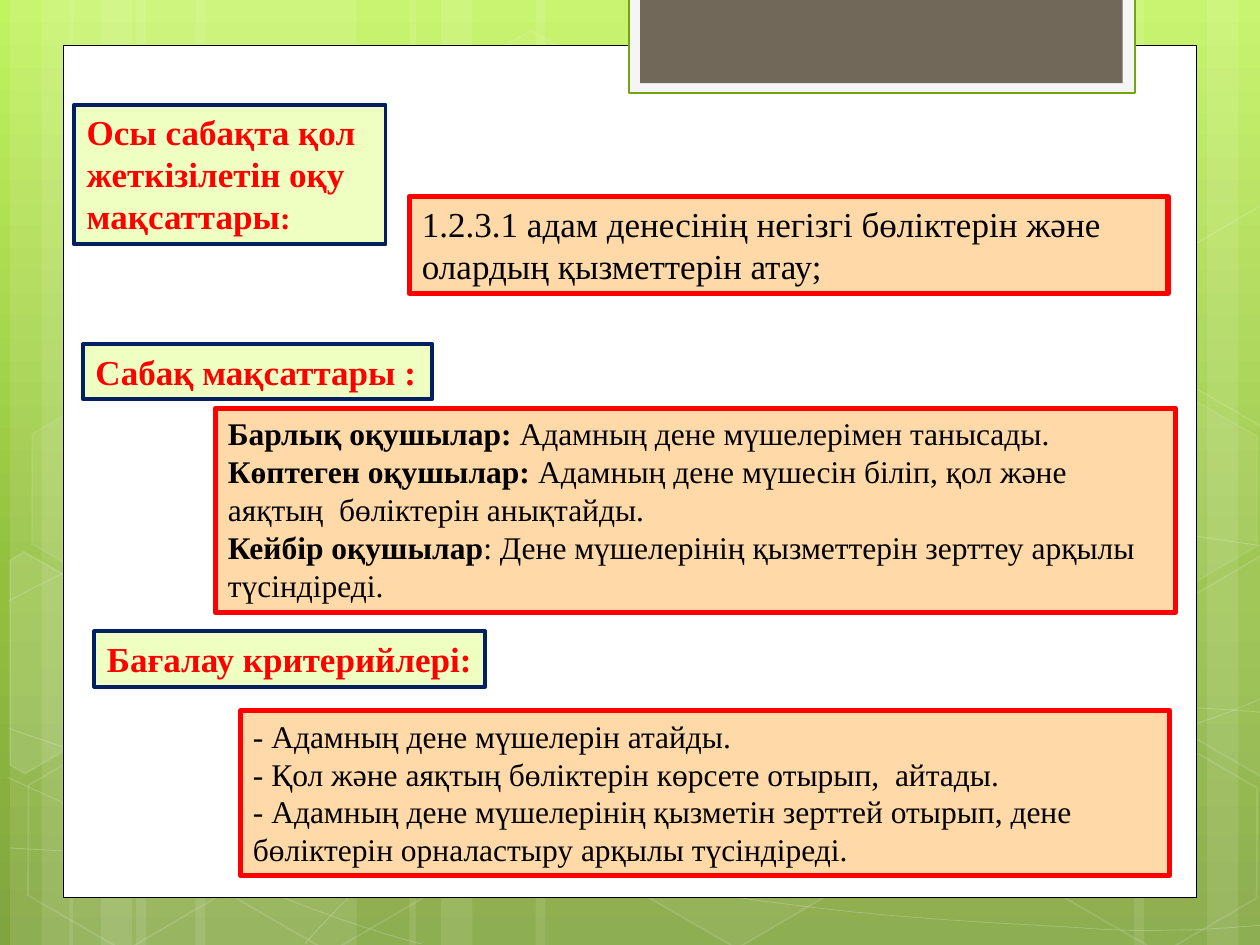
from copy import deepcopy
from pptx import Presentation
from pptx.dml.color import RGBColor
from pptx.enum.shapes import MSO_SHAPE
from pptx.enum.text import MSO_AUTO_SIZE
from pptx.oxml.ns import qn
from pptx.util import Inches, Pt
from lxml.etree import SubElement

WHITE = "FFFFFF"
FONT = "Times New Roman"
STRIPES = [
    (1.08, 1.75), (0.08, 0.5), (0.33, 0.83), (1.55, 1.75), (0.55, 0.5), (0.8, 0.83),
    (7.33, 1.75), (9.58, 0.5), (9, 0.83), (4.25, 3.08), (3.25, 0.5), (3.5, 0.83),
]
CURVES = [
    ([(0.07, 6.73), (0.61, 6.76), (1.15, 6.79), (1.9, 6.78), (2.65, 6.77), (3.58, 6.75),
      (4.58, 6.65), (5.58, 6.55), (7, 6.36), (7.92, 6.17), (8.83, 5.98), (9.77, 5.68),
      (10.07, 5.51)], None),
    ([(0.07, 4.77), (0.36, 4.61), (0.65, 4.46), (1.21, 4.31), (1.78, 4.16), (2.59, 3.94),
      (3.47, 3.87), (4.36, 3.8), (5.44, 3.79), (6.54, 3.87), (7.64, 3.95), (9.47, 4.26),
      (10.07, 4.34)], None),
    ([(0.06, 6.17), (1.27, 6.72), (2.47, 7.27), (3.34, 7.49)], None),
    ([(0.07, 5.78), (0.38, 5.89), (0.7, 6), (1.28, 6.16), (1.86, 6.31), (2.73, 6.56),
      (3.57, 6.73), (4.4, 6.9), (5.45, 7.08), (6.28, 7.18), (7.11, 7.29), (8, 7.33),
      (8.53, 7.36), (9.05, 7.4), (9.19, 7.38), (9.45, 7.38), (9.71, 7.37), (9.89, 7.35),
      (10.07, 7.34)], None),
    ([(2.42, 7.49), (2.6, 7.29), (2.78, 7.09), (3.02, 6.91), (3.26, 6.73), (3.6, 6.53),
      (3.88, 6.39), (4.16, 6.25), (4.33, 6.19), (4.7, 6.09), (5.06, 5.99), (5.73, 5.85),
      (6.08, 5.78), (6.44, 5.71), (6.49, 5.71), (6.8, 5.69), (7.11, 5.66), (7.6, 5.63),
      (7.94, 5.62), (8.29, 5.61), (8.86, 5.62), (8.86, 5.62), (9.53, 5.62),
      (9.71, 5.63), (9.88, 5.64), (9.97, 5.65), (10.06, 5.66), (10.03, 5.65),
      (10.06, 5.66)], 21),
]
HEXAGONS = [
    (3.34, 0.36, 4, 8), (4.97, 5.89, 6, 12), (0.11, 5.91, None, 12),
    (0.14, 3.12, 7, 8), (1.74, 5.92, None, 12), (7.53, 4.53, 10, 12),
    (8.34, 5.93, None, 12), (8.34, 3.14, 7, 8),
]
CUT = [
    ([(0.08, 4.45), (0.19, 4.38), (0.96, 4.82), (0.95, 5.7), (0.2, 6.14), (0.08, 6.07)], 10),
    ([(9.26, 4.85), (10.01, 4.41), (10.09, 4.46), (10.09, 6.13), (10.02, 6.17), (9.26, 5.73)], 4),
    ([(9.26, 2.07), (10.01, 1.63), (10.1, 1.68), (10.09, 3.35), (10.02, 3.39), (9.26, 2.95)], None),
]


def paint(fill, color, alpha=100):
    if not color or alpha is None:
        fill.background()
        return
    fill.solid()
    fill.fore_color.rgb = RGBColor.from_string(color)
    if alpha < 100:
        SubElement(fill._xPr.find(qn("a:solidFill"))[0], qn("a:alpha"), val=str(alpha * 1000))


def style(shape, fill, alpha=100, line=None, width=1, clear=100):
    paint(shape.fill, fill, alpha)
    paint(shape.line.fill, line, clear)
    if line:
        shape.line.width = Pt(width)


def add_shape(slide, kind, box, *look):
    shape = slide.shapes.add_shape(kind, *map(Inches, box))
    shape.shadow.inherit = False
    style(shape, *look)
    return shape


def add_free(slide, points, close, *look):
    start, *rest = [(Inches(x), Inches(y)) for x, y in points]
    pen = slide.shapes.build_freeform(*start)
    pen.add_line_segments(rest, close=close)
    shape = pen.convert_to_shape()
    shape.shadow.inherit = False
    style(shape, *look)
    return shape


def bend(shape, straight):
    nodes = list(shape._element.iter(qn("a:lnTo")))
    i = 0
    while i < len(nodes):
        if i == straight:
            i += 1
            continue
        curve = nodes[i].makeelement(qn("a:cubicBezTo"))
        nodes[i].addprevious(curve)
        for node in nodes[i:i + 3]:
            curve.append(node[0])
            node.getparent().remove(node)
        i += 3


def add_text(slide, box, paras, size, color, wrap=True):
    shape = slide.shapes.add_textbox(*map(Inches, box))
    frame = shape.text_frame
    frame.word_wrap = wrap
    frame.auto_size = MSO_AUTO_SIZE.SHAPE_TO_FIT_TEXT
    for i, (lead, rest) in enumerate(paras):
        para = frame.add_paragraph() if i else frame.paragraphs[0]
        para.font.name = FONT
        para.font.size = Pt(size)
        para.font.color.rgb = RGBColor.from_string(color)
        for text, bold in ((lead, True), (rest, False)):
            if text:
                run = para.add_run()
                run.text = text
                run.font.bold = bold
    return shape


def add_head(slide, box, text, wrap=False):
    shape = add_text(slide, box, [(text, "")], 20, "FF0000", wrap)
    style(shape, "EFFFC1", 100, "002060", 2.25)
    return shape


def add_body(slide, box, paras, size=18):
    shape = add_text(slide, box, paras, size, "000000")
    style(shape, "FFD9A7", 100, "FF0000", 3)


def set_back(slide):
    fill = slide.background.fill
    fill.gradient()
    fill.gradient_angle = 270
    stops = slide.background._cSld.find(".//" + qn("a:gsLst"))
    stops.append(deepcopy(stops[-1]))
    colors = [(0, "C3F35F"), (0.62, "93BF3F"), (1, "81A53E")]
    for stop, (place, color) in zip(fill.gradient_stops, colors):
        stop.position = place
        stop.color.rgb = RGBColor.from_string(color)


def add_decor(slide):
    for left, width in STRIPES:
        add_shape(slide, MSO_SHAPE.RECTANGLE, (left, 0, width, 7.5), WHITE, 10)
    for points, straight in CURVES:
        bend(add_free(slide, points, False, None, 100, WHITE, 0.5, 20), straight)
    for i, (left, top, alpha, clear) in enumerate(HEXAGONS):
        shape = add_shape(slide, MSO_SHAPE.HEXAGON, (left, top, 1.75, 1.52),
                          WHITE, alpha, WHITE, 1, clear)
        shape.adjustments[0] = 0.285
        shape.rotation = 30
    for points, alpha in CUT:
        add_free(slide, points, True, WHITE, alpha, WHITE, 1, 12)


def add_panel(slide):
    rect = MSO_SHAPE.RECTANGLE
    add_shape(slide, rect, (0.5, 0.36, 9, 6.76), WHITE, 100, "000000", 0.5)
    add_shape(slide, rect, (4.99, -0.02, 4.02, 0.76), "F5F5F5", 100, "74A510", 1.25)
    add_shape(slide, rect, (5.08, -0.02, 3.83, 0.68), "71685A")


def main():
    deck = Presentation()
    deck.slide_width, deck.slide_height = Inches(10), Inches(7.5)
    slide = deck.slides.add_slide(deck.slide_layouts[6])
    set_back(slide)
    add_decor(slide)
    add_panel(slide)
    aims = add_head(slide, (0.59, 0.83, 2.47, 1.11),
                    "Осы сабақта қол жеткізілетін оқу мақсаттары", True)
    colon = aims.text_frame.paragraphs[0].add_run()
    colon.text = ":"
    colon.font.bold = True
    colon.font.size = Pt(18)
    add_head(slide, (0.66, 2.73, 2.77, 0.44), "Сабақ мақсаттары :")
    add_body(slide, (1.71, 3.24, 7.62, 1.62), [
        ("Барлық оқушылар: ", "Адамның дене мүшелерімен танысады."),
        ("Көптеген оқушылар: ",
         "Адамның дене мүшесін біліп, қол және аяқтың  бөліктерін анықтайды."),
        ("Кейбір оқушылар", ": Дене мүшелерінің қызметтерін зерттеу арқылы түсіндіреді."),
    ])
    add_head(slide, (0.75, 5.01, 3.1, 0.44), "Бағалау критерийлері:")
    add_body(slide, (1.91, 5.64, 7.37, 1.31), [
        ("", "- Адамның дене мүшелерін атайды."),
        ("", "- Қол және аяқтың бөліктерін көрсете отырып,  айтады."),
        ("", "- Адамның дене мүшелерінің қызметін зерттей отырып, "
             "дене бөліктерін орналастыру арқылы түсіндіреді."),
    ])
    add_body(slide, (3.25, 1.56, 6.02, 0.77), [
        ("", "1.2.3.1 адам денесінің негізгі бөліктерін және олардың қызметтерін атау;"),
    ], 20)
    deck.save("out.pptx")


if __name__ == "__main__":
    main()
